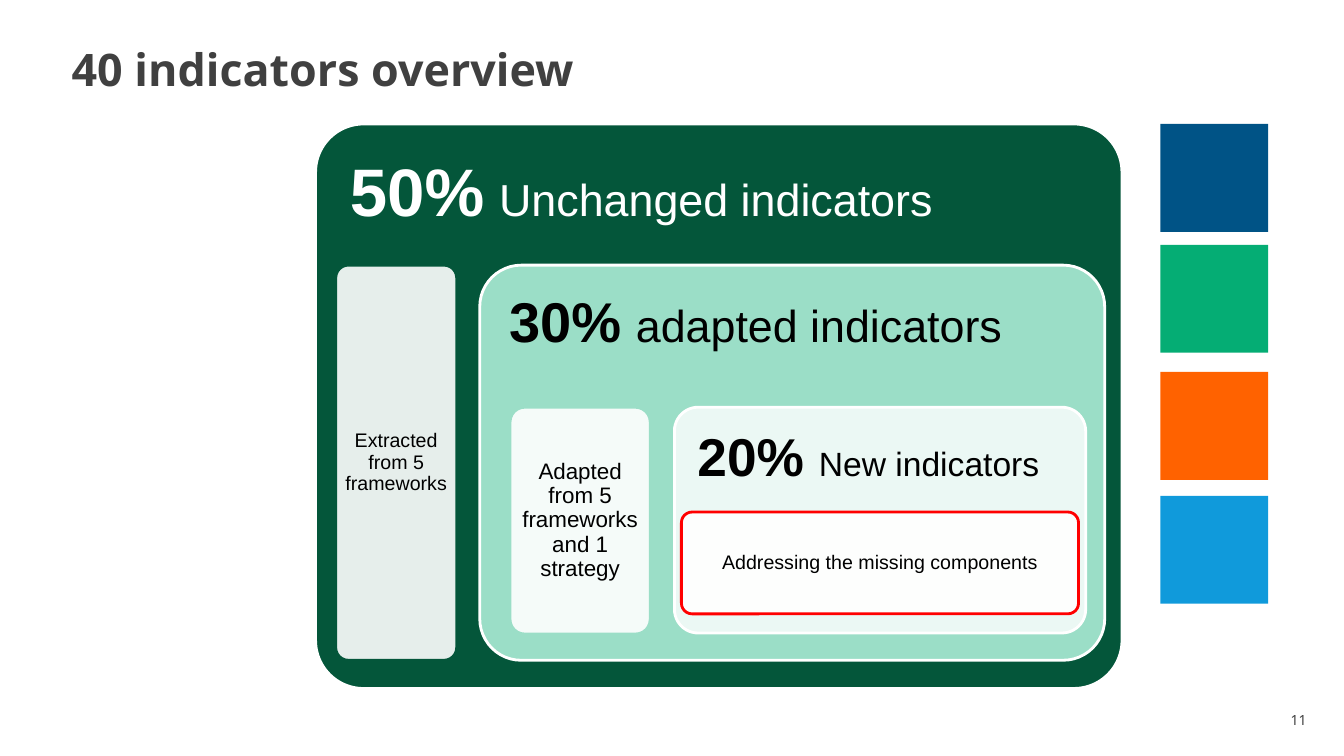
import pptx
import pptx.util
import pptx.dml.color
import pptx.enum.shapes
import pptx.enum.text
import pptx.oxml.ns
import lxml.etree

KIND = pptx.enum.shapes.MSO_SHAPE
ALIGN = pptx.enum.text.PP_ALIGN
ANCHOR = pptx.enum.text.MSO_ANCHOR
INK = {
    "white": "FFFFFF", "black": "000000", "title": "404040", "page": "3F3F3F",
    "dark": "04563A", "mint": "9BDEC7", "pale": "EBF8F4", "red": "FF0000",
    "navy": "005386", "green": "05AD74", "orange": "FF6200", "sky": "109ADB",
}

deck = pptx.Presentation()
deck.slide_width = pptx.util.Inches(13.33)
deck.slide_height = pptx.util.Inches(7.5)
slide = deck.slides.add_slide(deck.slide_layouts[6])


def place(area):
    """Turn percent shares of the slide into lengths."""
    wide, high = deck.slide_width, deck.slide_height
    return [int(part * side / 100) for part, side in zip(area, (wide, high) * 2)]


def write(shape, runs, font, tint, align, anchor, pads):
    """Fill a shape with one paragraph; runs are (text, size, bold)."""
    frame = shape.text_frame
    frame.word_wrap = True
    frame.vertical_anchor = anchor
    frame.margin_left, frame.margin_top, frame.margin_right, frame.margin_bottom = [
        pptx.util.Inches(pad) for pad in pads]
    para = frame.paragraphs[0]
    para.alignment = align
    for text, size, bold in runs:
        run = para.add_run()
        run.text = text
        run.font.name = font
        run.font.size = pptx.util.Pt(size)
        run.font.bold = bold
        run.font.color.rgb = pptx.dml.color.RGBColor.from_string(INK[tint])
    return para


# Title and page number
title = slide.shapes.add_textbox(*place((5.25, 5.33, 74.4, 7.6)))
write(title, [("40 indicators overview", 32, True)], "Noto Sans", "title",
      ALIGN.LEFT, ANCHOR.TOP, (0.01, 0.01, 0, 0))
page = slide.shapes.add_textbox(*place((91.2, 93.47, 6.75, 3.6)))
write(page, [("11", 10, False)], "Noto Sans", "page",
      ALIGN.RIGHT, ANCHOR.TOP, (0.1, 0.05, 0.1, 0.05))

# Colour squares on the right
for top, tint in ((16.4, "navy"), (32.4, "green"), (49.2, "orange"), (65.6, "sky")):
    square = slide.shapes.add_shape(KIND.RECTANGLE, *place((86.33, top, 8.03, 14.27)))
    square.shadow.inherit = False
    square.fill.solid()
    square.fill.fore_color.rgb = pptx.dml.color.RGBColor.from_string(INK[tint])
    square.line.fill.background()

# Nested panels, each followed by its note:
# area, corner, fill, line, text colour, padding, is note, runs
panels = [
    ((23.48, 16.4, 60, 74.67), 0.085, "dark", "white", "white", 0.2, False,
     [("50%", 48, True), (" ", 38, False), ("Unchanged indicators", 32, False)]),
    ((24.98, 35.07, 9, 52.27), 0.105, "white", "dark", "black", 0.03, True,
     [("Extracted from 5 frameworks", 14, False)]),
    ((35.7, 35.07, 46.5, 52.27), 0.105, "mint", "white", "black", 0.17, False,
     [("30%", 40, True), (" ", 38, False), ("adapted indicators", 32, False)]),
    ((37.95, 53.87, 10.43, 30), 0.105, "white", "mint", "black", 0.05, True,
     [("Adapted from 5 frameworks and 1 strategy", 16, False)]),
    ((50.18, 53.87, 30.6, 29.87), 0.105, "pale", "white", "black", 0.16, False,
     [("20% ", 38, True), ("New indicators", 24, False)]),
    ((50.7, 67.73, 29.55, 13.47), 0.105, "white", "red", "black", 0.06, True,
     [("Addressing the missing components", 14, False)]),
]
for area, bend, fill, line, tint, pad, note, runs in panels:
    panel = slide.shapes.add_shape(KIND.ROUNDED_RECTANGLE, *place(area))
    panel.adjustments[0] = bend
    panel.shadow.inherit = False
    panel.fill.solid()
    panel.fill.fore_color.rgb = pptx.dml.color.RGBColor.from_string(INK[fill])
    panel.line.color.rgb = pptx.dml.color.RGBColor.from_string(INK[line])
    panel.line.width = pptx.util.Pt(2)
    if note:
        # Notes let a tenth of the panel show through
        shade = panel.element.spPr.find(pptx.oxml.ns.qn("a:solidFill"))[0]
        lxml.etree.SubElement(shade, pptx.oxml.ns.qn("a:alpha"), val="90000")
    para = write(panel, runs, "Arial", tint,
                 ALIGN.CENTER if note else ALIGN.LEFT,
                 ANCHOR.MIDDLE if note else ANCHOR.TOP, [pad] * 4)
    para.line_spacing = 0.9

deck.save("out.pptx")
